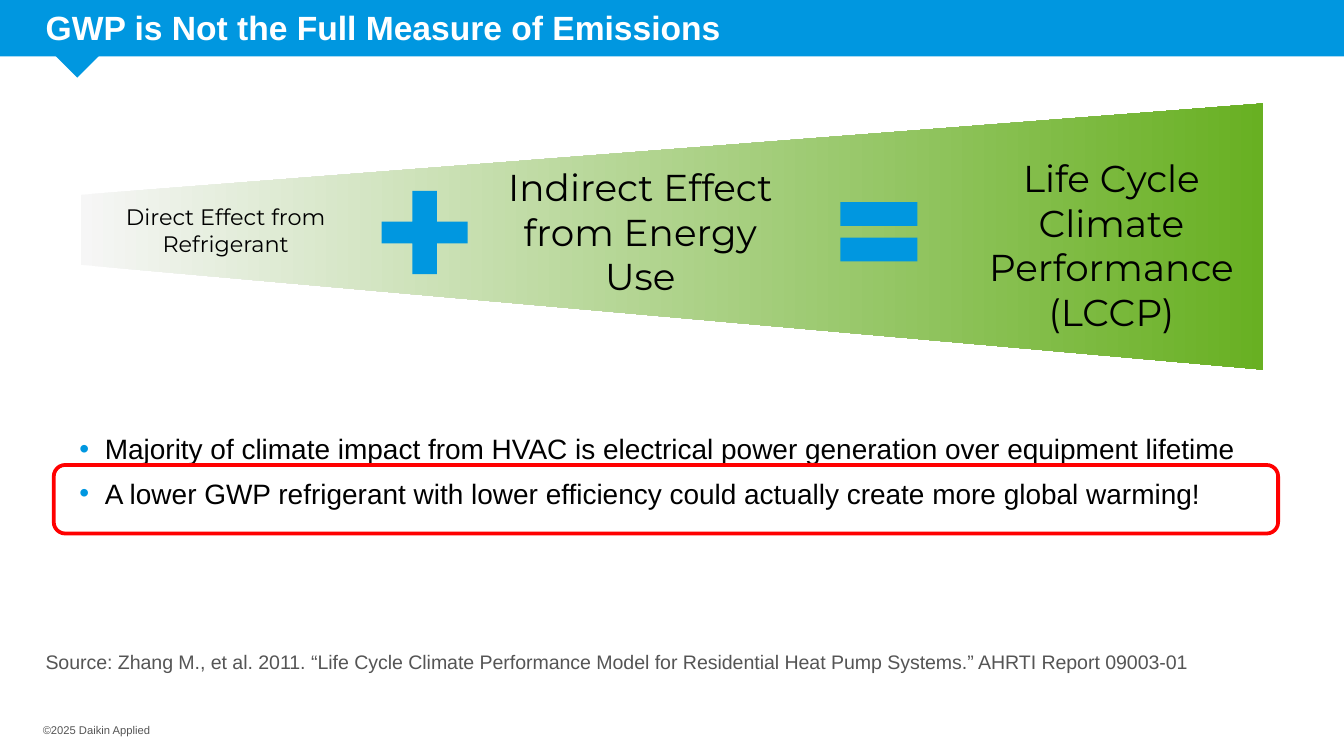
"""Build a slide on direct and indirect refrigerant emissions."""
from dataclasses import dataclass

import lxml.etree
import pptx
import pptx.dml.color
import pptx.enum.shapes
import pptx.enum.text
import pptx.oxml.ns
import pptx.util

Inches = pptx.util.Inches
Shape = pptx.enum.shapes.MSO_SHAPE
Anchor = pptx.enum.text.MSO_ANCHOR
Align = pptx.enum.text.PP_ALIGN
BLUE = "0097E0"


@dataclass
class Frame:
    left: float
    top: float
    width: float
    height: float

    def lengths(self) -> list:
        return [Inches(n) for n in (self.left, self.top, self.width, self.height)]


@dataclass
class Symbol:
    kind: Shape
    frame: Frame
    rotation: float = 0
    adjustment: float | None = None


@dataclass
class Label:
    text: str
    frame: Frame
    size: float


@dataclass
class Note:
    text: str
    frame: Frame
    size: float
    color: str


SYMBOLS = [
    Symbol(Shape.RECTANGLE, Frame(0, 0, 10, 0.42)),
    Symbol(Shape.RIGHT_TRIANGLE, Frame(0.46, 0.3, 0.23, 0.23), rotation=315),
    Symbol(Shape.MATH_EQUAL, Frame(6.15, 1.35, 0.78, 0.75)),
    Symbol(Shape.CROSS, Frame(2.84, 1.42, 0.64, 0.62), adjustment=0.37),
]
LABELS = [
    Label("Direct Effect from Refrigerant", Frame(0.62, 0.83, 2.12, 1.77), 12),
    Label("Indirect Effect from Energy Use", Frame(3.56, 0.83, 2.41, 1.78), 20),
    Label("Life Cycle Climate Performance\n(LCCP)", Frame(6.93, 0.83, 2.68, 1.98), 20),
]
BULLETS = [
    "Majority of climate impact from HVAC is electrical power generation over equipment lifetime",
    "A lower GWP refrigerant with lower efficiency could actually create more global warming!",
]
NOTES = [
    Note("Source: Zhang M., et al. 2011. “Life Cycle Climate Performance Model for "
         "Residential Heat Pump Systems.” AHRTI Report 09003-01",
         Frame(0.24, 4.79, 8.85, 0.45), 10.5, "555555"),
    Note("©2025 Daikin Applied", Frame(0.22, 5.33, 3.17, 0.3), 6, "545454"),
]


def rgb(value: str) -> pptx.dml.color.RGBColor:
    return pptx.dml.color.RGBColor.from_string(value)


def write(box, text: str, size: float, color: str, font: str = "Arial",
          align: Align = Align.LEFT, anchor: Anchor = Anchor.MIDDLE, bold: bool = False) -> None:
    box.text_frame.text = text
    box.text_frame.word_wrap = True
    box.text_frame.vertical_anchor = anchor
    for para in box.text_frame.paragraphs:
        para.alignment = align
        for span in para.runs:
            span.font.name = font
            span.font.size = pptx.util.Pt(size)
            span.font.bold = bold
            span.font.color.rgb = rgb(color)


def place(page, box, frame: Frame) -> None:
    box.left, box.top, box.width, box.height = frame.lengths()
    page.shapes.element.append(box.element)


def add_shape(page, kind: Shape, frame: Frame):
    shape = page.shapes.add_shape(kind, *frame.lengths())
    shape.shadow.inherit = False
    shape.fill.background()
    shape.line.fill.background()
    return shape


def add_symbol(page, symbol: Symbol) -> None:
    shape = add_shape(page, symbol.kind, symbol.frame)
    shape.fill.solid()
    shape.fill.fore_color.rgb = rgb(BLUE)
    shape.rotation = symbol.rotation
    if symbol.adjustment is not None:
        shape.adjustments[0] = symbol.adjustment


def add_wedge(page) -> None:
    builder = page.shapes.build_freeform(60, 145, scale=Inches(0.01))
    builder.add_line_segments([(940, 77), (940, 275), (60, 197)], close=True)
    wedge = builder.convert_to_shape()
    wedge.shadow.inherit = False
    wedge.line.fill.background()
    wedge.fill.gradient()
    wedge.fill.gradient_angle = 0
    for stop, color in zip(wedge.fill.gradient_stops, ("F6F6F6", "68B022")):
        stop.color.rgb = rgb(color)


def add_bullet(para) -> None:
    para.level = 1
    para.space_before = pptx.util.Pt(0)
    para.space_after = pptx.util.Pt(6)
    properties = para._p.get_or_add_pPr()
    properties.set("marL", str(Inches(0.19)))
    properties.set("indent", str(Inches(-0.19)))
    qn = pptx.oxml.ns.qn
    color = lxml.etree.SubElement(properties, qn("a:buClr"))
    lxml.etree.SubElement(color, qn("a:srgbClr"), val=BLUE)
    lxml.etree.SubElement(properties, qn("a:buFont"), typeface="Arial")
    lxml.etree.SubElement(properties, qn("a:buChar"), char="•")


def main() -> None:
    deck = pptx.Presentation()
    deck.slide_width, deck.slide_height = Inches(10), Inches(10 * 9 / 16)
    page = deck.slides.add_slide(deck.slide_layouts[1])
    title, body = page.placeholders
    add_wedge(page)
    for symbol in SYMBOLS:
        add_symbol(page, symbol)

    place(page, title, Frame(0.24, 0, 9.49, 0.41))
    write(title, "GWP is Not the Full Measure of Emissions", 18, "FFFFFF", bold=True)
    place(page, body, Frame(0.49, 2.81, 9.02, 1.39))
    write(body, "\n".join(BULLETS), 15, "000000")
    for para in body.text_frame.paragraphs:
        add_bullet(para)

    for label in LABELS:
        box = add_shape(page, Shape.ROUNDED_RECTANGLE, label.frame)
        write(box, label.text, label.size, "000000", "Montserrat", Align.CENTER)
    for note in NOTES:
        box = page.shapes.add_textbox(*note.frame.lengths())
        write(box, note.text, note.size, note.color, anchor=Anchor.TOP)

    highlight = add_shape(page, Shape.ROUNDED_RECTANGLE, Frame(0.4, 3.46, 9.11, 0.51))
    highlight.line.color.rgb = rgb("FF0000")
    highlight.line.width = pptx.util.Pt(2)
    deck.save("out.pptx")


if __name__ == "__main__":
    main()
